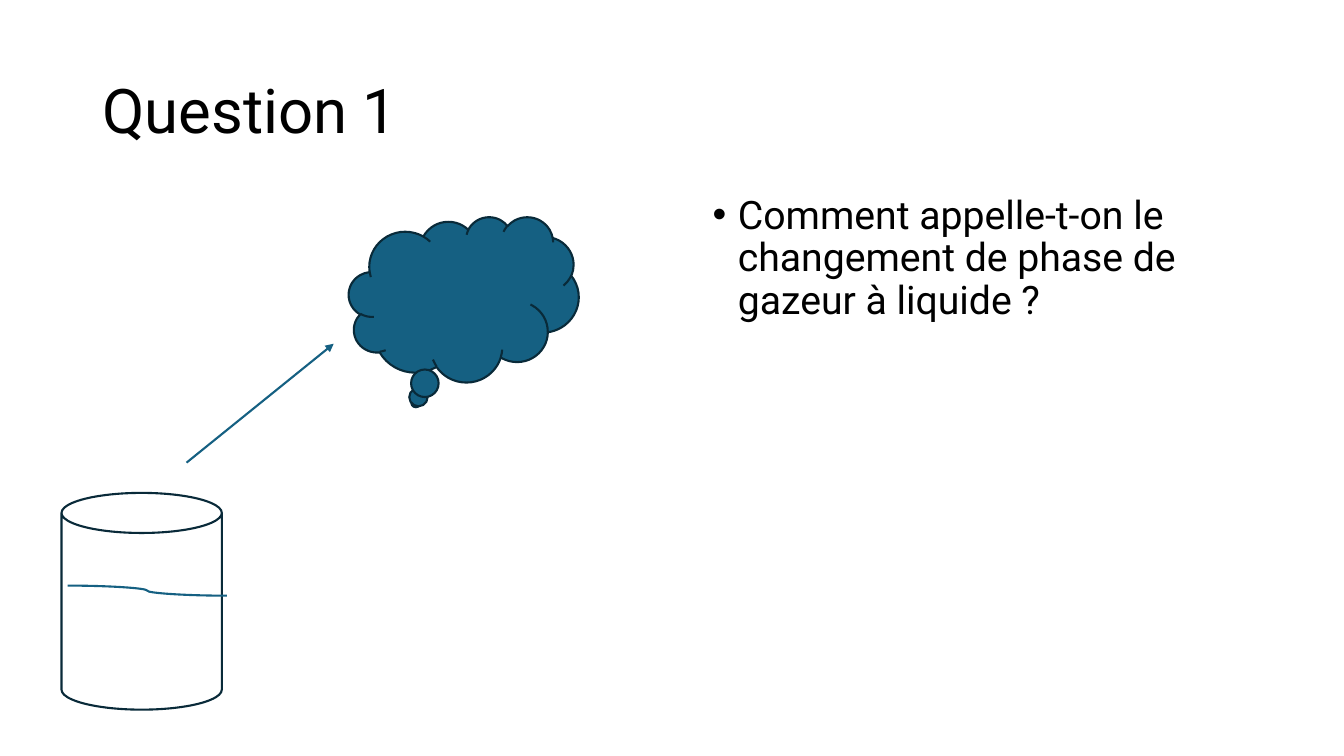
import pptx
import pptx.util
import pptx.dml.color
import pptx.enum.shapes
import pptx.enum.text
import pptx.oxml
import pptx.oxml.ns

Inches = pptx.util.Inches
Pt = pptx.util.Pt
SHAPE = pptx.enum.shapes.MSO_SHAPE
CONNECTOR = pptx.enum.shapes.MSO_CONNECTOR
ANCHOR = pptx.enum.text.MSO_ANCHOR

FONT = "Roboto"
BLACK, WHITE, BLUE, NAVY = "000000", "FFFFFF", "156082", "092A39"

HEADING = ("Question 1", (0.92, 0.4, 11.5, 1.45), 44, ANCHOR.MIDDLE)
QUESTION = (
    "Comment appelle-t-on le changement de phase de gazeur à liquide ?",
    (6.97, 1.89, 5.45, 4.87), 28, ANCHOR.TOP,
)
BEAKER = (SHAPE.CAN, (0.61, 4.89, 1.59, 2.15), WHITE)
WATER_LEVEL = (CONNECTOR.CURVE, (0.67, 5.81, 2.25, 5.91))
VAPOUR = (SHAPE.CLOUD_CALLOUT, (3.46, 2.15, 2.28, 1.64), BLUE)
EVAPORATION = (CONNECTOR.STRAIGHT, (1.85, 4.59, 3.31, 3.41))


def color(value):
    return pptx.dml.color.RGBColor.from_string(value)


def add_text(slide, text, box, size, anchor):
    frame = slide.shapes.add_textbox(*map(Inches, box)).text_frame
    frame.word_wrap = True
    frame.vertical_anchor = anchor
    frame.text = text
    paragraph = frame.paragraphs[0]
    paragraph.line_spacing = 0.9
    font = paragraph.runs[0].font
    font.name, font.size = FONT, Pt(size)
    font.color.rgb = color(BLACK)
    return paragraph


def add_bullet(paragraph):
    paragraph.space_before = Pt(10)
    properties = paragraph._p.get_or_add_pPr()
    properties.set("marL", str(Inches(0.25)))
    properties.set("indent", str(-Inches(0.25)))
    for tag, attribute, value in (("a:buFont", "typeface", "Arial"), ("a:buChar", "char", "•")):
        bullet = pptx.oxml.ns.qn(tag)
        properties.append(properties.makeelement(bullet, {attribute: value}))


def add_solid(slide, kind, box, fill):
    solid = slide.shapes.add_shape(kind, *map(Inches, box))
    solid.shadow.inherit = False
    solid.fill.solid()
    solid.fill.fore_color.rgb = color(fill)
    solid.line.color.rgb = color(NAVY)
    solid.line.width = Pt(1.5)


def add_line(slide, kind, ends):
    line = slide.shapes.add_connector(kind, *map(Inches, ends))
    line.line.color.rgb = color(BLUE)
    line.line.width = Pt(1.5)
    properties = line._element.spPr
    properties.append(properties.makeelement(pptx.oxml.ns.qn("a:effectLst"), {}))
    return line


def add_arrowhead(line):
    outline = line.line._get_or_add_ln()
    outline.append(outline.makeelement(pptx.oxml.ns.qn("a:tailEnd"), {"type": "triangle"}))


def main():
    deck = pptx.Presentation()
    deck.slide_width, deck.slide_height = Inches(13.33), Inches(7.5)
    slide = deck.slides.add_slide(deck.slide_layouts[6])

    add_text(slide, *HEADING)
    add_bullet(add_text(slide, *QUESTION))
    add_solid(slide, *BEAKER)
    add_line(slide, *WATER_LEVEL)
    add_solid(slide, *VAPOUR)
    add_arrowhead(add_line(slide, *EVAPORATION))

    deck.save("out.pptx")


if __name__ == "__main__":
    main()
